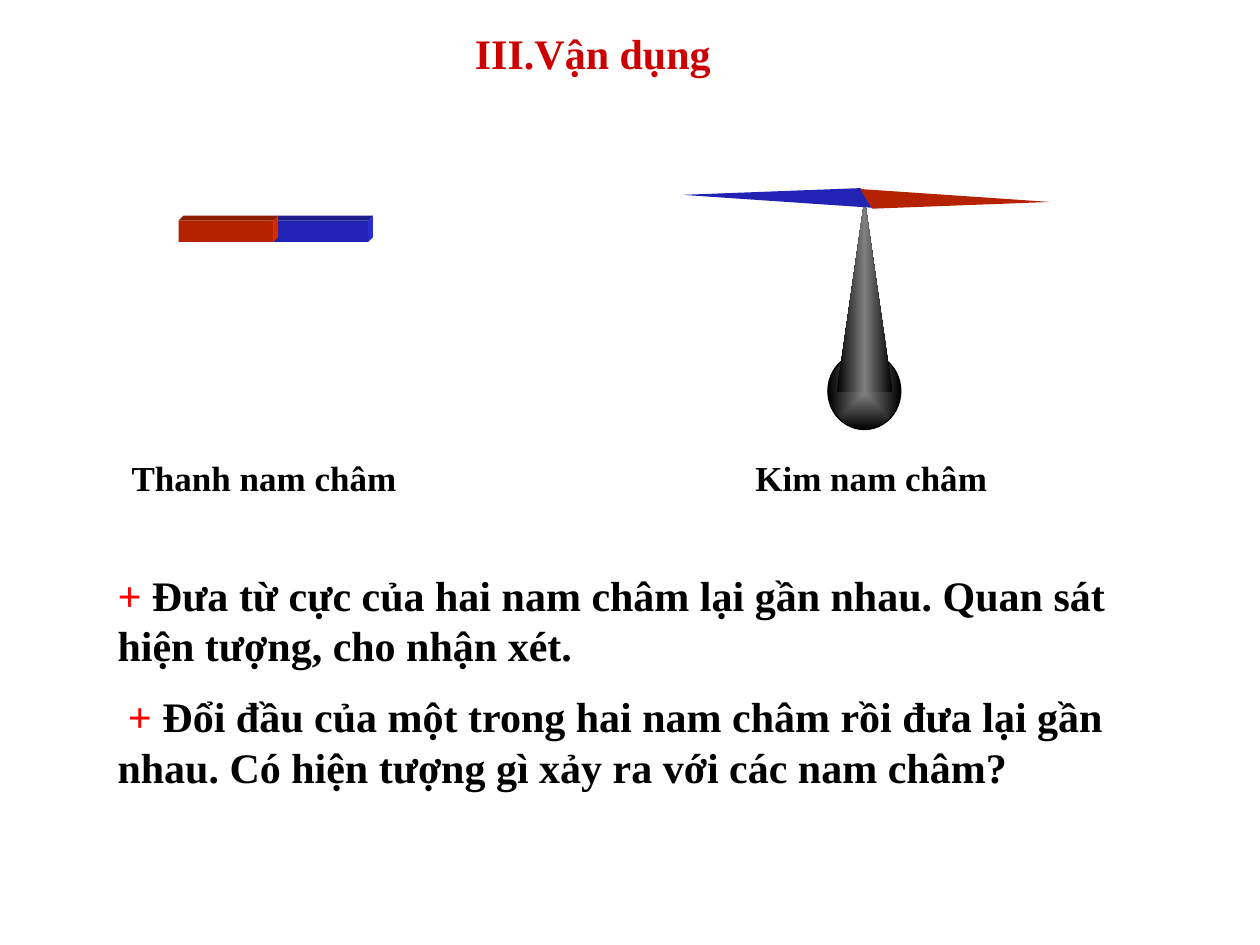
from pptx import Presentation
from pptx.dml.color import RGBColor
from pptx.enum.shapes import MSO_SHAPE
from pptx.enum.text import MSO_ANCHOR, MSO_AUTO_SIZE, PP_ALIGN
from pptx.oxml import parse_xml
from pptx.oxml.ns import nsdecls, qn
from pptx.util import Cm, Pt

TITLE_RED = RGBColor(0xCC, 0x00, 0x00)
PLUS_RED = RGBColor(0xFF, 0x00, 0x00)
BLACK = RGBColor(0x00, 0x00, 0x00)
NORTH = RGBColor(0xB5, 0x22, 0x00)
NORTH_TOP = RGBColor(0x8A, 0x1C, 0x00)
NORTH_END = RGBColor(0xD2, 0x2B, 0x00)
SOUTH = RGBColor(0x22, 0x22, 0xB5)
SOUTH_TOP = RGBColor(0x1C, 0x1C, 0x8A)
SOUTH_END = RGBColor(0x2B, 0x2B, 0xD2)

deck = Presentation()
deck.slide_width, deck.slide_height = Cm(25.4), Cm(19.05)
slide = deck.slides.add_slide(deck.slide_layouts[5])
shapes = slide.shapes


def write(box, place, paragraphs, size, align):
    box.left, box.top, box.width, box.height = map(Cm, place)
    frame = box.text_frame
    frame_format = {"word_wrap": True, "auto_size": MSO_AUTO_SIZE.NONE,
                    "vertical_anchor": MSO_ANCHOR.TOP}
    for name, value in frame_format.items():
        setattr(frame, name, value)
    for index, runs in enumerate(paragraphs):
        paragraph = frame.add_paragraph() if index else frame.paragraphs[0]
        paragraph.alignment = align
        paragraph.space_before = Pt(12 if index else 0)
        for words, color in runs:
            run = paragraph.add_run()
            run.text = words
            font_format = {"name": "Times New Roman", "size": Pt(size), "bold": True}
            for name, value in font_format.items():
                setattr(run.font, name, value)
            run.font.color.rgb = color


def paint(shape, color):
    shape.shadow.inherit = False
    shape.line.fill.background()
    shape.fill.solid()
    shape.fill.fore_color.rgb = color


write(shapes.title, (5.28, 0.43, 13.34, 1.27), [[("III.Vận dụng", TITLE_RED)]],
      24, PP_ALIGN.CENTER)

ROUND = '<a:path path="shape"><a:fillToRect l="50000" t="50000" r="50000" b="50000"/></a:path>'
ACROSS = '<a:lin ang="0" scaled="1"/>'
stand = [
    (MSO_SHAPE.OVAL, (16.69, 7.11, 1.47, 1.55), ["808080", "000000"], ROUND),
    (MSO_SHAPE.ISOSCELES_TRIANGLE, (16.87, 4.01, 1.12, 3.89),
     ["000000", "808080", "000000"], ACROSS),
]
for kind, place, grays, direction in stand:
    part = shapes.add_shape(kind, *map(Cm, place))
    paint(part, BLACK)
    if kind == MSO_SHAPE.OVAL:
        part.line.color.rgb = BLACK
        part.line.width = Pt(0.75)
    stops = "".join(
        f'<a:gs pos="{100000 * i // (len(grays) - 1)}"><a:srgbClr val="{gray}"/></a:gs>'
        for i, gray in enumerate(grays))
    properties = part._element.spPr
    properties.replace(
        properties.find(qn("a:solidFill")),
        parse_xml(f'<a:gradFill {nsdecls("a")}><a:gsLst>{stops}</a:gsLst>{direction}</a:gradFill>'))

captions = [("Thanh nam châm", 2.34, 5.97), ("Kim nam châm", 14.81, 5.51)]
for caption, left, width in captions:
    write(shapes.add_textbox(0, 0, 0, 0), (left, 9.07, width, 1.09),
          [[(caption, BLACK)]], 20, PP_ALIGN.CENTER)

needle = [(13.77, 3.68, 3.9, SOUTH), (17.32, 3.94, 183.9, NORTH)]
for left, top, turn, color in needle:
    half = shapes.add_shape(MSO_SHAPE.ISOSCELES_TRIANGLE, Cm(left), Cm(top), Cm(3.84), Cm(0.38))
    half.adjustments[0] = 0.93
    half.rotation = turn
    paint(half, color)

BAR_TOP, BAR_WIDTH, BAR_HEIGHT, DEPTH = 4.45, 1.91, 0.43, 0.1
bar = [(5.51, SOUTH, SOUTH_TOP, SOUTH_END), (3.6, NORTH, NORTH_TOP, NORTH_END)]
for left, front, top, end in bar:
    face = shapes.add_shape(MSO_SHAPE.RECTANGLE, Cm(left), Cm(BAR_TOP), Cm(BAR_WIDTH), Cm(BAR_HEIGHT))
    paint(face, front)
    right, bottom = left + BAR_WIDTH, BAR_TOP + BAR_HEIGHT
    back = BAR_TOP - DEPTH
    sides = [
        (top, [(left, BAR_TOP), (left + DEPTH, back), (right + DEPTH, back), (right, BAR_TOP)]),
        (end, [(right, BAR_TOP), (right + DEPTH, back), (right + DEPTH, bottom - DEPTH), (right, bottom)]),
    ]
    for color, corners in sides:
        points = [(Cm(x), Cm(y)) for x, y in corners]
        outline = shapes.build_freeform(*points[0])
        outline.add_line_segments(points[1:])
        paint(outline.convert_to_shape(), color)

questions = [
    [("+ ", PLUS_RED),
     ("Đưa từ cực của hai nam châm lại gần nhau. Quan sát hiện tượng, cho nhận xét.", BLACK)],
    [(" + ", PLUS_RED),
     ("Đổi đầu của một trong hai nam châm rồi đưa lại gần nhau. "
      "Có hiện tượng gì xảy ra với các nam châm?", BLACK)],
]
write(shapes.add_textbox(0, 0, 0, 0), (2.12, 11.35, 21.17, 4.88), questions, 24, PP_ALIGN.LEFT)

deck.save("out.pptx")
